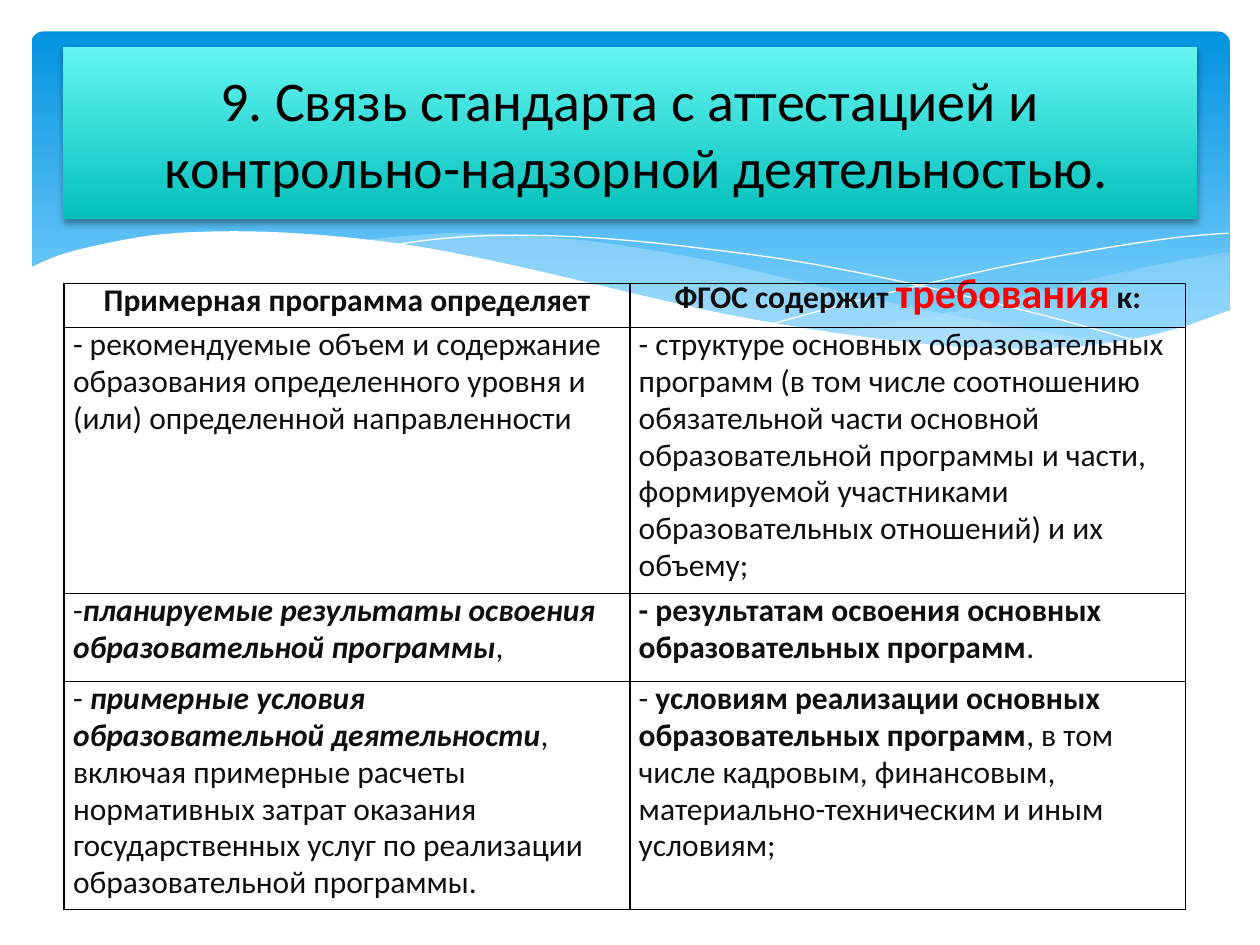
from lxml.etree import SubElement
from pptx import Presentation
from pptx.dml.color import RGBColor
from pptx.enum.shapes import MSO_SHAPE
from pptx.enum.text import MSO_ANCHOR, MSO_AUTO_SIZE, PP_ALIGN
from pptx.oxml import parse_xml
from pptx.oxml.ns import nsdecls, qn
from pptx.util import Inches, Pt

FONT = "Calibri"
INK = "0F0F0F"
BOLD = {"bold": True}
ACCENT = {"bold": True, "italic": True}

UPPER_RIGHT = [
    [(9.76, 2), (9.35, 2.07), (8.91, 2.16), (8.32, 2.3), (7.53, 2.48), (6.61, 2.65)],
    [(6.61, 2.65), (7.05, 2.71), (7.57, 2.76), (8.14, 2.78), (8.63, 2.75),
     (9.05, 2.69), (9.42, 2.59), (9.76, 2.47)],
]
MIDDLE = [
    [(8.93, 2.73), (8.37, 2.65), (7.75, 2.54), (7.06, 2.4), (6.29, 2.22), (5.69, 2.08),
     (5.14, 1.98), (4.65, 1.91), (4.2, 1.87), (3.61, 1.85), (3.13, 1.88), (2.86, 1.91)],
    [(2.86, 1.91), (3.42, 1.99), (4.04, 2.11), (4.91, 2.32), (5.66, 2.48), (6.34, 2.61),
     (6.95, 2.7), (7.48, 2.76), (8.07, 2.78), (8.57, 2.77), (8.93, 2.73)],
]
FALLING_LINE = [[(3.09, 1.95), (3.44, 1.9), (3.87, 1.87), (4.33, 1.87), (4.89, 1.9),
                 (5.56, 1.97), (6.36, 2.08), (7.27, 2.26), (8.31, 2.51), (9.07, 2.72)]]
RISING_LINE = [[(6.13, 2.57), (6.95, 2.35), (7.76, 2.16), (8.36, 2.04), (8.95, 1.94),
                (9.38, 1.88), (9.75, 1.85)]]
WHITE_FRONT = [
    [(9.77, 2.46), (9.3, 2.62), (8.75, 2.73), (8.09, 2.77), (7.44, 2.74), (6.68, 2.65),
     (5.79, 2.5), (5.03, 2.33), (4.18, 2.13), (3.4, 1.97), (2.71, 1.88), (2.11, 1.84),
     (1.61, 1.84), (1.19, 1.87), (0.76, 1.95), (0.46, 2.03), (0.23, 2.13)],
    [(0.23, 3.29), (9.77, 3.29)],
]

ROWS = [
    [[("Примерная программа определяет", BOLD)],
     [("ФГОС содержит ", BOLD), ("требования", {"bold": True, "size": 24, "color": "FF0000"}),
      (" к:", BOLD)]],
    [[("- рекомендуемые объем и содержание образования определенного уровня и (или) "
       "определенной направленности", {})],
     [("- структуре основных образовательных программ (в том числе соотношению обязательной "
       "части основной образовательной программы и части, формируемой участниками "
       "образовательных отношений) и их объему;", {})]],
    [[("-", {}), ("планируемые результаты освоения образовательной программы", ACCENT), (",", {})],
     [("- результатам освоения основных образовательных программ", BOLD), (".", {})]],
    [[("- ", {}), ("примерные условия образовательной деятельности", ACCENT),
      (", включая примерные расчеты нормативных затрат оказания государственных услуг "
       "по реализации образовательной программы.", {})],
     [("- ", {}), ("условиям реализации основных образовательных программ", BOLD),
      (", в том числе кадровым, финансовым, материально-техническим и иным условиям;", {})]],
]


def rgb(value):
    """Turn a hex string into a colour."""
    return RGBColor.from_string(value)


def add_text(para, text, size=18, color=INK, bold=False, italic=False):
    """Add one formatted span to a paragraph."""
    span = para.add_run()
    span.text = text
    span.font.name, span.font.size = FONT, Pt(size)
    span.font.bold, span.font.italic = bold, italic
    span.font.color.rgb = rgb(color)


def fill_gradient(shape, stops):
    """Fill a shape with a gradient running from top to bottom."""
    shape.fill.gradient()
    shape.fill.gradient_angle = 270
    for stop, (position, color) in zip(shape.fill.gradient_stops, stops):
        stop.position = position
        stop.color.rgb = rgb(color)


def smooth(points, steps=4):
    """Return points on a Catmull-Rom curve through the given points."""
    padded = [points[0], *points, points[-1]]
    curve = [points[0]]
    for a, b, c, d in zip(padded, padded[1:], padded[2:], padded[3:]):
        for step in range(1, steps + 1):
            t = step / steps
            curve.append(tuple(
                (2 * q + (r - p) * t + (2 * p - 5 * q + 4 * r - s) * t ** 2
                 + (3 * q - p - 3 * r + s) * t ** 3) / 2
                for p, q, r, s in zip(a, b, c, d)))
    return curve


def add_wave(page, box, strokes, fill=None, alpha=100, line=None):
    """Draw smooth strokes joined into one outline, measured from the box corner."""
    left, top = box[:2]
    points = [(Inches(left + x), Inches(top + y))
              for stroke in strokes for x, y in smooth(stroke)]
    builder = page.shapes.build_freeform(*points[0])
    builder.add_line_segments(points[1:], close=fill is not None)
    wave = builder.convert_to_shape()
    wave.shadow.inherit = False
    if fill:
        wave.fill.solid()
        wave.fill.fore_color.rgb = rgb(fill)
        color = wave.fill._xPr.find(f".//{qn('a:srgbClr')}")
        SubElement(color, qn("a:alpha"), val=str(alpha * 1000))
    else:
        wave.fill.background()
    if line:
        wave.line.color.rgb = rgb(line)
        wave.line.width = Pt(0)
    else:
        wave.line.fill.background()


def add_backdrop(page, box):
    """Draw the blue panel and its waves inside the page box."""
    left, top, width, _ = box
    panel = page.shapes.add_shape(
        MSO_SHAPE.ROUNDED_RECTANGLE, Inches(left + 0.25), Inches(top + 0.25),
        Inches(width - 0.49), Inches(2.7))
    panel.adjustments[0] = 0.034
    panel.shadow.inherit = False
    panel.line.fill.background()
    fill_gradient(panel, [(0, "0293E0"), (0.9, "83D3FE")])
    add_wave(page, box, UPPER_RIGHT, fill="C6E7FC", alpha=29)
    add_wave(page, box, MIDDLE, fill="C6E7FC", alpha=40)
    add_wave(page, box, FALLING_LINE, line="FFFFFF")
    add_wave(page, box, RISING_LINE, line="FFFFFF")
    add_wave(page, box, WHITE_FRONT, fill="FFFFFF")


def add_borders(cell, color="000000", width=1):
    """Give a cell a line on all four sides."""
    properties = cell._tc.get_or_add_tcPr()
    for index, side in enumerate("LRTB"):
        properties.insert(index, parse_xml(
            f'<a:ln{side} {nsdecls("a")} w="{Pt(width)}"><a:solidFill>'
            f'<a:srgbClr val="{color}"/></a:solidFill></a:ln{side}>'))


def add_comparison(page, box):
    """Place the table that compares the programme with the standard."""
    table = page.shapes.add_table(len(ROWS), 2, *map(Inches, box)).table
    table.horz_banding = table.first_row = False
    for column, width in zip(table.columns, (4.49, 4.41)):
        column.width = Inches(width)
    for row, height, contents in zip(table.rows, (0.35, 2.11, 0.7, 1.81), ROWS):
        row.height = Inches(height)
        for cell, spans in zip(row.cells, contents):
            cell.margin_left = cell.margin_right = Inches(0.07)
            cell.margin_top = cell.margin_bottom = 0
            cell.fill.background()
            add_borders(cell)
            para = cell.text_frame.paragraphs[0]
            para.line_spacing = Pt(21)
            para.alignment = PP_ALIGN.CENTER if contents is ROWS[0] else PP_ALIGN.LEFT
            for text, style in spans:
                add_text(para, text, **style)


def add_title(page, box):
    """Format the title placeholder as a shaded band in front of the backdrop."""
    title = page.shapes.title
    title.left, title.top, title.width, title.height = map(Inches, box)
    page.shapes._spTree.append(title._element)
    fill_gradient(title, [(0, "65F5F1"), (1, "04C0BB")])
    title._element.spPr.append(parse_xml(
        f'<a:effectLst {nsdecls("a")}><a:outerShdw blurRad="{Pt(4)}" dist="{Pt(2)}" '
        'dir="5400000" rotWithShape="0"><a:srgbClr val="000000"><a:alpha val="38000"/>'
        '</a:srgbClr></a:outerShdw></a:effectLst>'))
    frame = title.text_frame
    frame.word_wrap = True
    frame.auto_size = MSO_AUTO_SIZE.NONE
    frame.vertical_anchor = MSO_ANCHOR.MIDDLE
    para = frame.paragraphs[0]
    para.alignment = PP_ALIGN.CENTER
    properties = para._p.get_or_add_pPr()
    properties.set("marL", str(Inches(0.11)))
    properties.set("indent", str(Inches(-0.56)))
    add_text(para, "9. Связь стандарта с аттестацией и контрольно-надзорной деятельностью.",
             size=32, color="000000")


def main():
    """Build the slide and save the deck."""
    deck = Presentation()
    deck.slide_width, deck.slide_height = Inches(10), Inches(7.5)
    page = deck.slides.add_slide(deck.slide_layouts[5])
    add_backdrop(page, (0, 0, 10, 7.5))
    add_comparison(page, (0.51, 2.25, 8.9, 4.97))
    add_title(page, (0.5, 0.37, 9, 1.37))
    deck.save("out.pptx")


if __name__ == "__main__":
    main()
